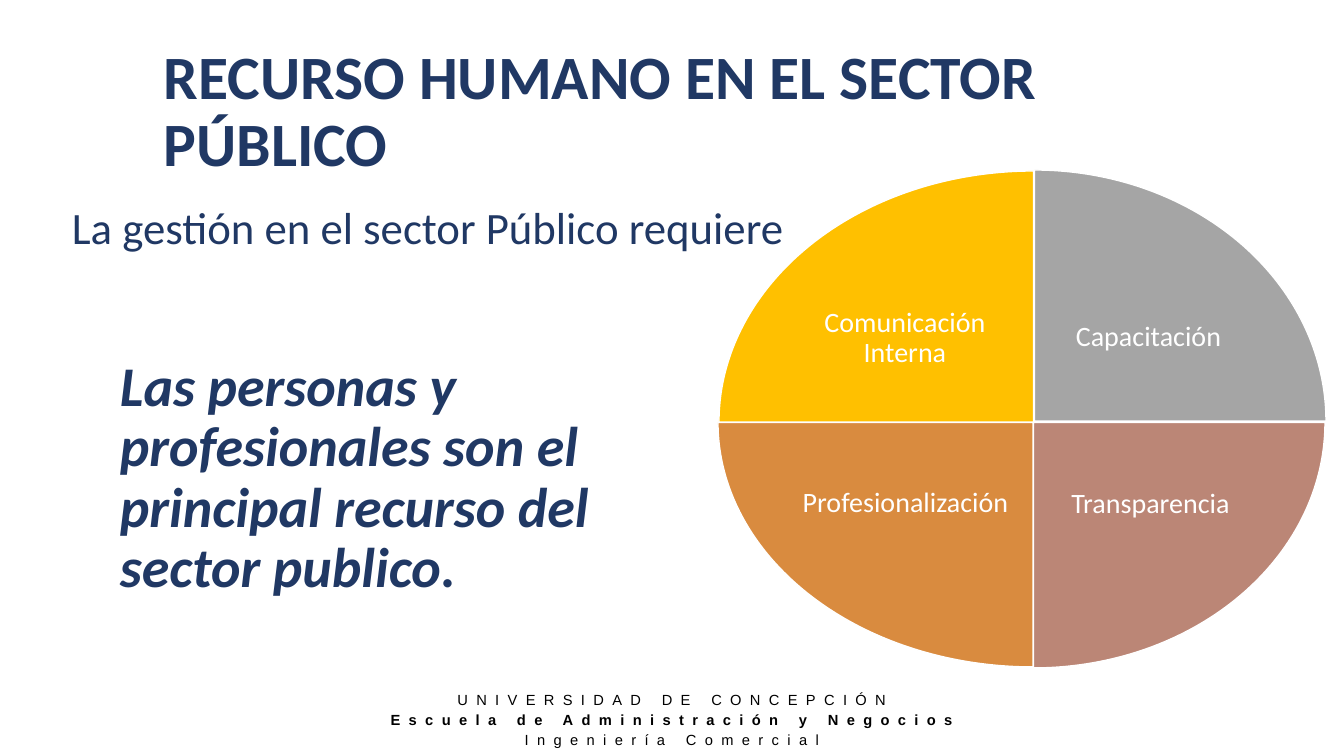
from pptx import Presentation
from pptx.dml.color import RGBColor
from pptx.enum.shapes import MSO_SHAPE as Shape
from pptx.enum.text import MSO_ANCHOR as Anchor, PP_ALIGN as Align
from pptx.util import Emu, Pt

COLORS = {
    "navy": "203864",
    "black": "000000",
    "white": "FFFFFF",
    "gray": "A5A5A5",
    "rose": "BB8676",
    "orange": "D98B3F",
    "yellow": "FFC000",
}


def px(*lengths):
    """Turn pixels, 100.8 to the inch, into EMU."""
    return [Emu(round(length * 914400 / 100.8)) for length in lengths]


def add_text(page, area, lines, size, color, font="Calibri", bold=False, italic=False,
             align=Align.LEFT, anchor=Anchor.TOP, spacing=1.0, inset=None, tracking=None):
    """Add a wrapping text box with one paragraph per (text, bold) line."""
    frame = page.shapes.add_textbox(*px(*area)).text_frame
    frame.word_wrap = True
    frame.vertical_anchor = anchor
    if inset is not None:
        frame.margin_left = frame.margin_top = frame.margin_right = frame.margin_bottom = px(inset)[0]
    for index, line in enumerate(lines):
        para = frame.paragraphs[0] if index == 0 else frame.add_paragraph()
        para.alignment = align
        para.line_spacing = spacing
        span = para.add_run()
        span.text = line
        span.font.name = font
        span.font.size = Pt(size)
        span.font.bold = bold or index == 1
        span.font.italic = italic
        span.font.color.rgb = RGBColor.from_string(COLORS[color])
        if tracking:
            span.font._element.set("spc", str(tracking))


deck = Presentation()
deck.slide_width, deck.slide_height = px(1344, 756)
page = deck.slides.add_slide(deck.slide_layouts[6])

# Footer: the second line is bold
add_text(page, (0, 683, 1344, 73),
         ["UNIVERSIDAD DE CONCEPCIÓN", "Escuela de Administración y Negocios", "Ingeniería Comercial"],
         10.5, "black", font="Arial", align=Align.CENTER, spacing=1.15, tracking=600)

# Title and key message
add_text(page, (154, 40, 1005, 146), ["RECURSO HUMANO EN EL SECTOR PÚBLICO"],
         44, "navy", bold=True, anchor=Anchor.MIDDLE, spacing=0.9)
add_text(page, (110, 353, 582, 264),
         ["Las personas y profesionales son el principal recurso del sector publico."],
         40, "navy", bold=True, italic=True, spacing=0.9)

# Quarters of the wheel, clockwise from the top
quarters = [
    ("Capacitación", "gray", (743, 170, 583, 502), (1041, 263, 215, 149)),
    ("Transparencia", "rose", (742, 177, 583, 491), (1043, 431, 215, 146)),
    ("Profesionalización", "orange", (718, 178, 630, 489), (789, 431, 233, 145)),
    ("Comunicación Interna", "yellow", (719, 171, 629, 502), (789, 264, 232, 149)),
]
QUARTER_TURN = 54  # 90 degrees in pie adjustment units
for index, (label, color, pie_area, label_area) in enumerate(quarters):
    pie = page.shapes.add_shape(Shape.PIE, *px(*pie_area))
    pie.adjustments[0] = (index + 3) % 4 * QUARTER_TURN
    pie.adjustments[1] = index * QUARTER_TURN
    pie.shadow.inherit = False
    pie.fill.solid()
    pie.fill.fore_color.rgb = RGBColor.from_string(COLORS[color])
    pie.line.color.rgb = RGBColor.from_string(COLORS["white"])
    pie.line.width = Pt(1)
    add_text(page, label_area, [label], 20, "white", align=Align.CENTER,
             anchor=Anchor.MIDDLE, spacing=0.9, inset=3)

# Lead-in to the wheel
add_text(page, (62, 195, 737, 65), ["La gestión en el sector Público requiere"], 32, "navy")

deck.save("out.pptx")
